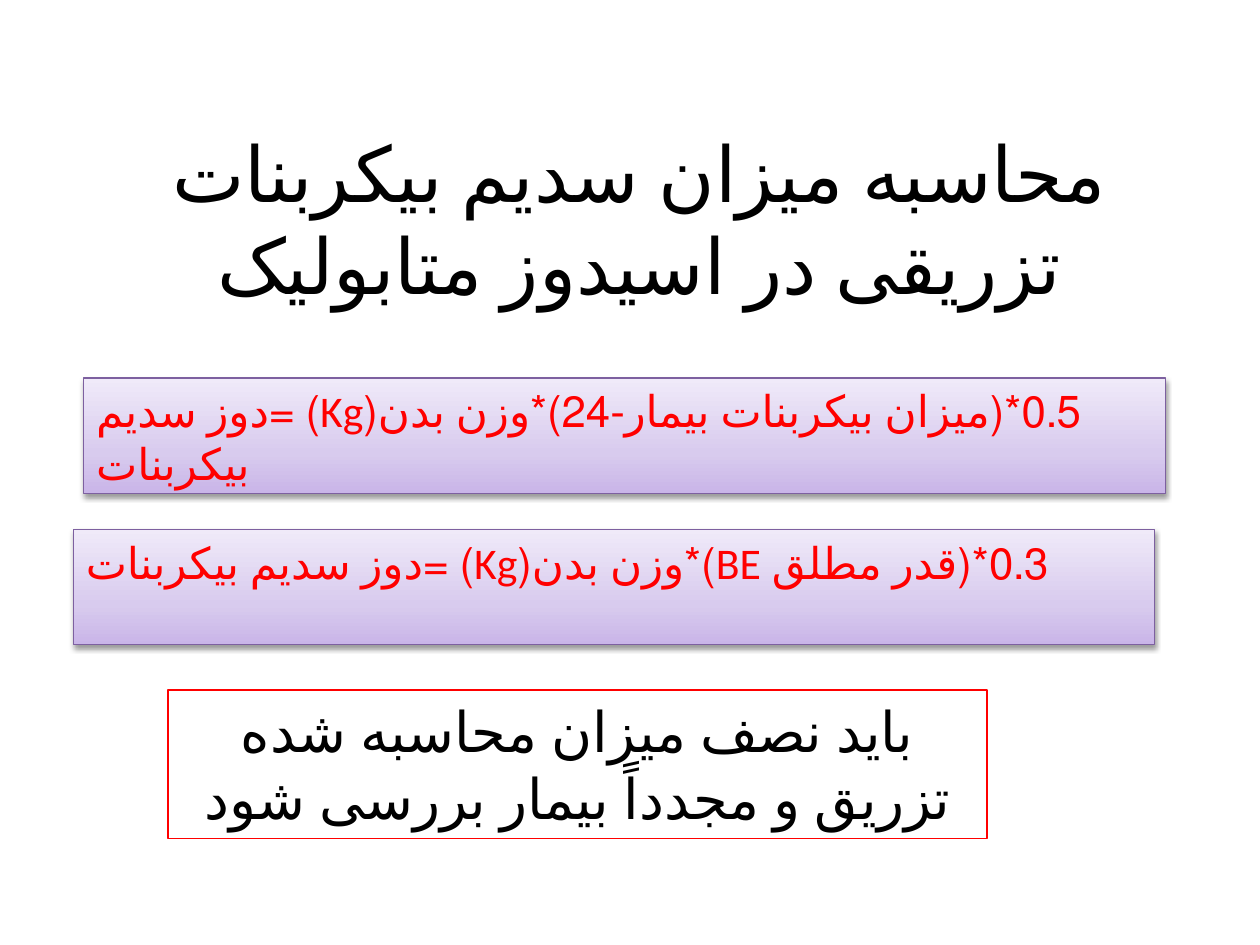
from dataclasses import dataclass

from lxml import etree
from pptx import Presentation
from pptx.dml.color import RGBColor
from pptx.enum.lang import MSO_LANGUAGE_ID
from pptx.enum.shapes import MSO_SHAPE
from pptx.enum.text import MSO_ANCHOR, PP_ALIGN
from pptx.oxml.ns import qn
from pptx.util import Cm, Pt

RECTANGLE = MSO_SHAPE.RECTANGLE
TOP, MIDDLE = MSO_ANCHOR.TOP, MSO_ANCHOR.MIDDLE
LEFT, CENTER = PP_ALIGN.LEFT, PP_ALIGN.CENTER
PERSIAN = MSO_LANGUAGE_ID.FARSI


@dataclass(frozen=True)
class Theme:
    font: str = "Calibri"
    ink: str = "000000"
    red: str = "FF0000"
    violet_line: str = "7D60A0"
    violet_stops: tuple = ((0, "C9B5E8"), (35, "D8CBEE"), (100, "F0EAF9"))
    title_size: float = 44
    note_size: float = 32
    formula_size: float = 25
    line_width: float = 0.75


THEME = Theme()

TITLE = "محاسبه میزان سدیم بیکربنات تزریقی در اسیدوز متابولیک"
TITLE_AREA = (2.11, 2.34, 21.59, 4.09)
FORMULAS = [
    ("0.5*(میزان بیکربنات بیمار-24)*وزن بدن(Kg) =دوز سدیم بیکربنات", 1.69, 7.62),
    ("0.3*(قدر مطلق BE)*وزن بدن(Kg) =دوز سدیم بیکربنات", 1.48, 10.67),
]
FORMULA_WIDTH, FORMULA_HEIGHT = 21.8, 2.33
NOTE = "باید نصف میزان محاسبه شده تزریق و مجدداً بیمار بررسی شود"
NOTE_AREA = (3.39, 13.91, 16.51, 3)


def write(shape, text, *, size, color, align=CENTER, anchor=TOP, rtl=False):
    frame = shape.text_frame
    frame.word_wrap = True
    frame.vertical_anchor = anchor
    paragraph = frame.paragraphs[0]
    paragraph.alignment = align
    if rtl:
        paragraph._p.get_or_add_pPr().set("rtl", "1")
    run = paragraph.add_run()
    run.text = text
    run.font.name = THEME.font
    run.font.language_id = PERSIAN
    run.font.size = Pt(size)
    run.font.color.rgb = RGBColor.from_string(color)


def add_box(slide, area, line_color):
    box = slide.shapes.add_shape(RECTANGLE, *map(Cm, area))
    box.shadow.inherit = False
    box.fill.background()
    box.line.color.rgb = RGBColor.from_string(line_color)
    box.line.width = Pt(THEME.line_width)
    return box


def add_color(parent, color):
    return etree.SubElement(parent, qn("a:srgbClr"), val=color)


def shade_violet(box):
    box.fill.gradient()
    box.fill.gradient_angle = 90
    properties = box._element.spPr
    stops = properties.find(qn("a:gradFill")).find(qn("a:gsLst"))
    for stop in list(stops):
        stops.remove(stop)
    for percent, color in THEME.violet_stops:
        add_color(etree.SubElement(stops, qn("a:gs"), pos=str(percent * 1000)), color)


def drop_shadow(box):
    effects = box._element.spPr.find(qn("a:effectLst"))
    shadow = etree.SubElement(
        effects, qn("a:outerShdw"), blurRad=str(Pt(3.1)), dist=str(Pt(1.6)),
        dir="5400000", rotWithShape="0",
    )
    etree.SubElement(add_color(shadow, THEME.ink), qn("a:alpha"), val="38000")


def main():
    deck = Presentation()
    deck.slide_width, deck.slide_height = Cm(25.4), Cm(19.05)
    slide = deck.slides.add_slide(deck.slide_layouts[6])

    title = slide.shapes.add_textbox(*map(Cm, TITLE_AREA))
    write(title, TITLE, size=THEME.title_size, color=THEME.ink, anchor=MIDDLE)

    for formula, left, top in FORMULAS:
        panel = add_box(slide, (left, top, FORMULA_WIDTH, FORMULA_HEIGHT), THEME.violet_line)
        shade_violet(panel)
        drop_shadow(panel)
        write(panel, formula, size=THEME.formula_size, color=THEME.red, align=LEFT, rtl=True)

    note = add_box(slide, NOTE_AREA, THEME.red)
    write(note, NOTE, size=THEME.note_size, color=THEME.ink)

    deck.save("out.pptx")


if __name__ == "__main__":
    main()
